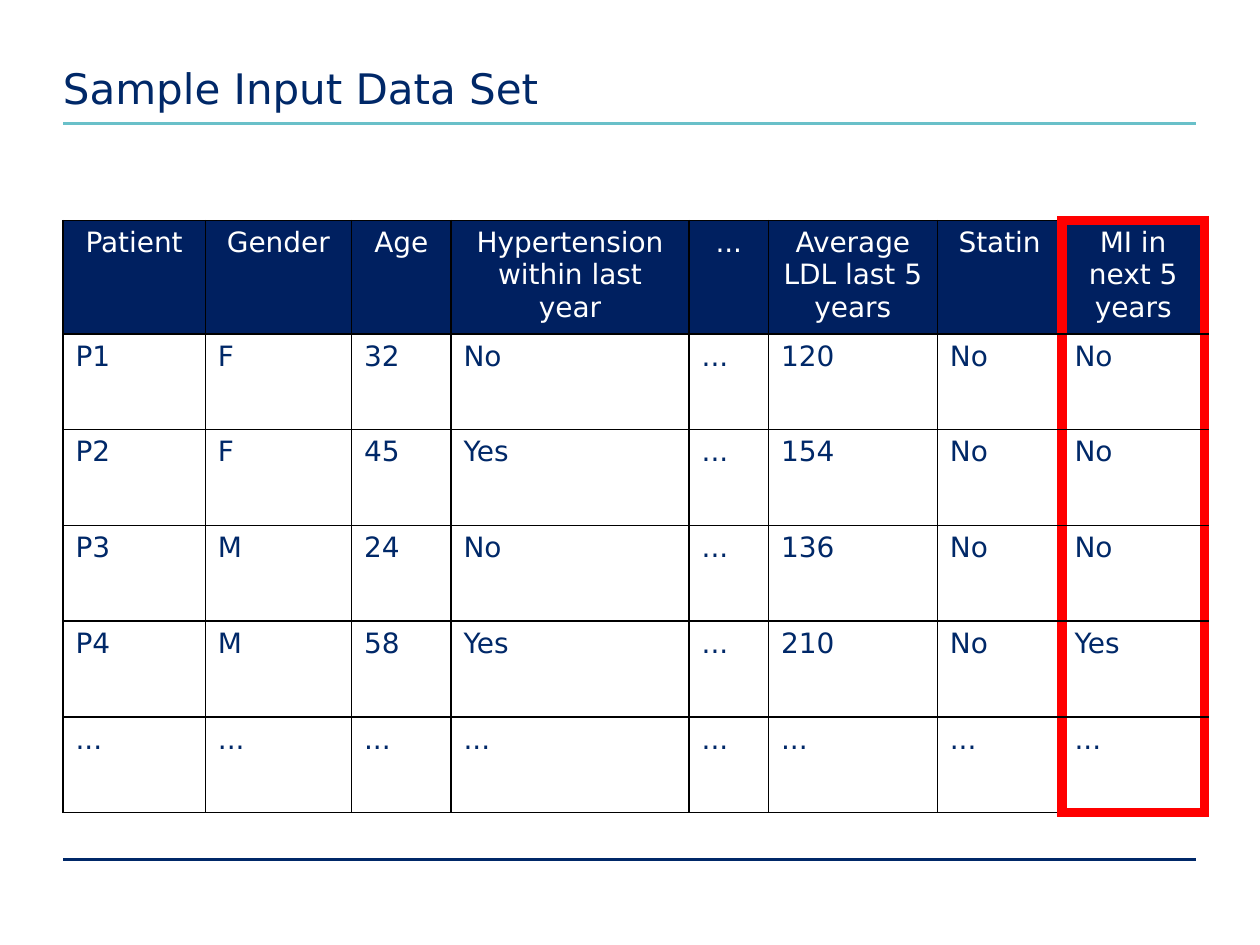
import pptx
import pptx.util
import pptx.dml.color
import pptx.enum.shapes
import pptx.enum.text
import pptx.oxml
import pptx.oxml.ns

WIDE, HIGH = 10, 7.5
LEFT, RIGHT = 0.5, 9.49
FONT = "DejaVu Sans"
HUES = {
    "navy": "002868", "head": "002060", "teal": "69C0C9",
    "white": "FFFFFF", "black": "000000", "red": "FF0000",
}
COLS = [1.13, 1.16, 0.79, 1.89, 0.63, 1.34, 0.99, 1.13]
ROWS = [0.84] + [0.76] * 5
DATA = [
    ["Patient", "Gender", "Age", "Hypertension within last year", "...",
     "Average LDL last 5 years", "Statin", "MI in next 5 years"],
    ["P1", "F", "32", "No", "...", "120", "No", "No"],
    ["P2", "F", "45", "Yes", "...", "154", "No", "No"],
    ["P3", "M", "24", "No", "...", "136", "No", "No"],
    ["P4", "M", "58", "Yes", "...", "210", "No", "Yes"],
    ["..."] * 8,
]


def inch(size):
    return pptx.util.Inches(size)


def tint(name):
    return pptx.dml.color.RGBColor.from_string(HUES[name])


def add_run(para, text, size, hue):
    run = para.add_run()
    run.text = text
    run.font.name = FONT
    run.font.size = pptx.util.Pt(size)
    run.font.color.rgb = tint(hue)


def add_rule(slide, top, hue):
    rule = slide.shapes.add_connector(
        pptx.enum.shapes.MSO_CONNECTOR.STRAIGHT,
        inch(LEFT), inch(top), inch(RIGHT), inch(top))
    rule.line.color.rgb = tint(hue)
    rule.line.width = pptx.util.Pt(1.5)
    props = rule.element.spPr
    props.append(pptx.oxml.parse_xml(
        f'<a:effectLst {pptx.oxml.ns.nsdecls("a")}/>'))


def add_title(slide, text):
    box = slide.shapes.add_textbox(
        inch(LEFT), 0, inch(WIDE * 0.9), inch(HIGH * 0.12))
    frame = box.text_frame
    frame.word_wrap = True
    frame.vertical_anchor = pptx.enum.text.MSO_ANCHOR.BOTTOM
    frame.margin_left = frame.margin_right = 0
    frame.margin_top = frame.margin_bottom = 0
    add_run(frame.paragraphs[0], text, 24, "navy")


def add_edge(cell, side, hue, width):
    cell._tc.get_or_add_tcPr().append(pptx.oxml.parse_xml(
        f'<a:ln{side} {pptx.oxml.ns.nsdecls("a")} '
        f'w="{pptx.util.Pt(width)}" cmpd="sng">'
        f'<a:solidFill><a:srgbClr val="{HUES[hue]}"/></a:solidFill>'
        f'<a:prstDash val="solid"/></a:ln{side}>'))


def red_sides(row, col):
    """Sides of a cell that lie on the frame round the last column."""
    last = len(COLS) - 1
    if col == last - 1:
        return "R"
    if col < last:
        return ""
    return "LR" + "T" * (row == 0) + "B" * (row == len(ROWS) - 1)


def fill_cell(cell, row, col):
    # Borders go before the fill in the cell's properties
    marked = red_sides(row, col)
    for side in "LRTB":
        add_edge(cell, side, *(("red", 6) if side in marked else ("black", 1)))
    para = cell.text_frame.paragraphs[0]
    if row == 0:
        cell.fill.solid()
        cell.fill.fore_color.rgb = tint("head")
        para.alignment = pptx.enum.text.PP_ALIGN.CENTER
    else:
        cell.fill.background()
    add_run(para, DATA[row][col], 16, "navy" if row else "white")


def add_grid(slide):
    grid = slide.shapes.add_table(
        len(ROWS), len(COLS), inch(LEFT), inch(1.75),
        inch(sum(COLS)), inch(sum(ROWS))).table
    grid.horz_banding = False
    for col, width in enumerate(COLS):
        grid.columns[col].width = inch(width)
    for row, height in enumerate(ROWS):
        grid.rows[row].height = inch(height)
        for col in range(len(COLS)):
            fill_cell(grid.cell(row, col), row, col)


def main():
    deck = pptx.Presentation()
    deck.slide_width, deck.slide_height = inch(WIDE), inch(HIGH)
    slide = deck.slides.add_slide(deck.slide_layouts[6])
    slide.background.fill.solid()
    slide.background.fill.fore_color.rgb = tint("white")
    # Rules above and below the content
    add_rule(slide, 0.98, "teal")
    add_rule(slide, 6.82, "navy")
    # Title and table
    add_title(slide, "Sample Input Data Set")
    add_grid(slide)
    deck.save("out.pptx")


if __name__ == "__main__":
    main()
